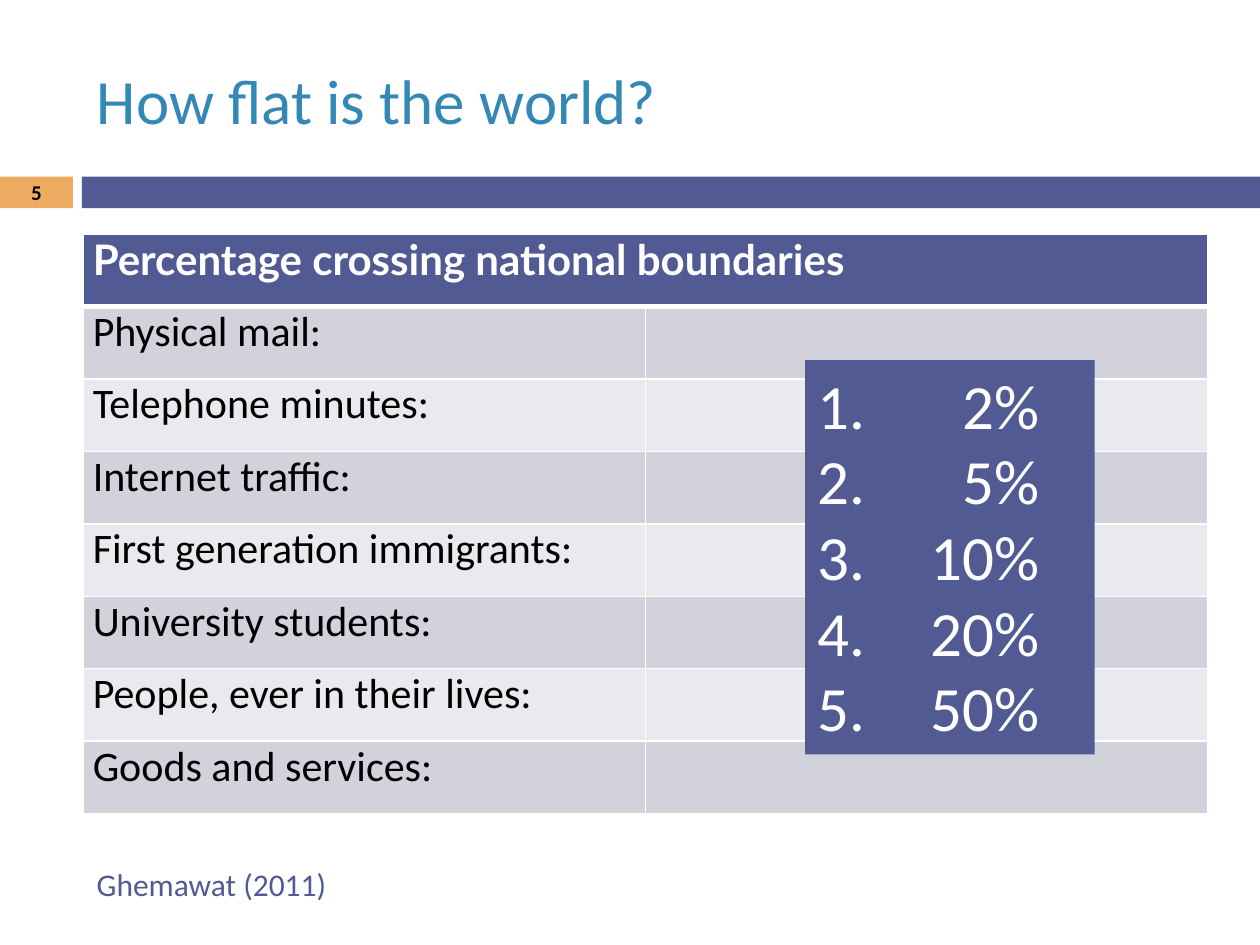
import pptx
import pptx.util
import pptx.dml.color
import pptx.enum.shapes
import pptx.enum.text
import pptx.oxml.ns
from lxml import etree

Cm, Pt = pptx.util.Cm, pptx.util.Pt
ALIGN = pptx.enum.text.PP_ALIGN
ANCHOR = pptx.enum.text.MSO_ANCHOR
qn = pptx.oxml.ns.qn

# Content
TITLE = "How flat is the world?"
NUMBER = "5"
HEAD = "Percentage crossing national boundaries"
ITEMS = ["Physical mail:", "Telephone minutes:", "Internet traffic:",
         "First generation immigrants:", "University students:",
         "People, ever in their lives:", "Goods and services:"]
ANSWERS = ["2%", "5%", "10%", "20%", "50%"]
SOURCE = "Ghemawat (2011)"

THEME = {
    "font": "Calibri", "head font": "Lato",
    "blue": "3488B6", "indigo": "525A93", "orange": "EDAA61",
    "white": "FFFFFF", "black": "000000", "bands": ["D1D2DC", "E9EAEE"],
    "big": 36, "cell": 24, "note": 18, "small": 12,
}

# Layout, in centimetres
WIDTH, HEIGHT = 25.4, 19.05
BAR_TOP, BAR_HIGH = 3.56, 0.64
TAG_WIDE, BAR_LEFT = 1.47, 1.65
LEFT, WIDE = 1.7, 22.66
ROW_HIGH = 1.46
TAB = 4.47


def paint(fill, color):
    fill.solid()
    fill.fore_color.rgb = pptx.dml.color.RGBColor.from_string(color)


def write(frame, text, size, color, font=THEME["font"], bold=False,
          align=ALIGN.LEFT, anchor=ANCHOR.TOP, tab=None):
    """Fill a text frame, one paragraph for each line of text."""
    frame.word_wrap = True
    frame.vertical_anchor = anchor
    for i, line in enumerate(text.split("\n")):
        para = frame.add_paragraph() if i else frame.paragraphs[0]
        para.alignment = align
        if tab:
            stops = etree.SubElement(para._p.get_or_add_pPr(), qn("a:tabLst"))
            etree.SubElement(stops, qn("a:tab"), pos=str(Cm(tab)), algn="r")
        run = para.add_run()
        run.text = line
        run.font.name, run.font.size, run.font.bold = font, Pt(size), bold
        run.font.color.rgb = pptx.dml.color.RGBColor.from_string(color)


def block(slide, box, color):
    shape = slide.shapes.add_shape(
        pptx.enum.shapes.MSO_SHAPE.RECTANGLE, *map(Cm, box))
    shape.shadow.inherit = False
    paint(shape.fill, color)
    shape.line.fill.background()
    return shape


def border(cell, top=1, bottom=1):
    """Draw white rules on all four sides of a cell."""
    props = cell._tc.get_or_add_tcPr()
    sides = [("L", 1), ("R", 1), ("T", top), ("B", bottom)]
    for i, (side, width) in enumerate(sides):
        line = etree.Element(qn("a:ln" + side), w=str(Pt(width)))
        fill = etree.SubElement(line, qn("a:solidFill"))
        etree.SubElement(fill, qn("a:srgbClr"), val=THEME["white"])
        props.insert(i, line)


def grid(slide):
    count = len(ITEMS) + 1
    table = slide.shapes.add_table(
        count, 2, Cm(1.68), Cm(4.72), Cm(WIDE), Cm(ROW_HIGH * count)).table
    for col in table.columns:
        col.width = Cm(WIDE / 2)
    table.cell(0, 0).merge(table.cell(0, 1))
    for r, text in enumerate([HEAD] + ITEMS):
        table.rows[r].height = Cm(ROW_HIGH)
        head = r == 0
        for c in range(2):
            cell = table.cell(r, c)
            cell.margin_left = cell.margin_right = Cm(0.19)
            cell.margin_top = cell.margin_bottom = 0
            paint(cell.fill,
                  THEME["indigo"] if head else THEME["bands"][(r - 1) % 2])
            border(cell, top=3 if r == 1 else 1, bottom=3 if head else 1)
        write(table.cell(r, 0).text_frame, text, THEME["cell"],
              THEME["white" if head else "black"], bold=head,
              font=THEME["head font" if head else "font"])


def main():
    deck = pptx.Presentation()
    deck.slide_width, deck.slide_height = Cm(WIDTH), Cm(HEIGHT)
    slide = deck.slides.add_slide(deck.slide_layouts[5])

    # Title
    title = slide.shapes.title
    title.left, title.top = Cm(LEFT), Cm(0.63)
    title.width, title.height = Cm(WIDE), Cm(2.74)
    write(title.text_frame, TITLE, THEME["big"], THEME["blue"],
          anchor=ANCHOR.MIDDLE)

    # Band with the page number
    tag = block(slide, (0, BAR_TOP, TAG_WIDE, BAR_HIGH), THEME["orange"])
    block(slide, (BAR_LEFT, BAR_TOP, WIDTH - BAR_LEFT, BAR_HIGH),
          THEME["indigo"])
    frame = tag.text_frame
    frame.margin_top = frame.margin_bottom = 0
    write(frame, NUMBER, THEME["small"], THEME["black"], bold=True,
          align=ALIGN.CENTER, anchor=ANCHOR.MIDDLE)

    # Table
    grid(slide)

    # Source
    note = slide.shapes.add_textbox(Cm(LEFT), Cm(17.32), Cm(13.18), Cm(1.02))
    write(note.text_frame, SOURCE, THEME["note"], THEME["indigo"])

    # Answer panel
    panel = block(slide, (16.23, 7.26, 5.84, 7.95), THEME["indigo"])
    lines = [f"{i}.\t{text}" for i, text in enumerate(ANSWERS, 1)]
    write(panel.text_frame, "\n".join(lines), THEME["big"], THEME["white"],
          tab=TAB)

    deck.save("out.pptx")


if __name__ == "__main__":
    main()
